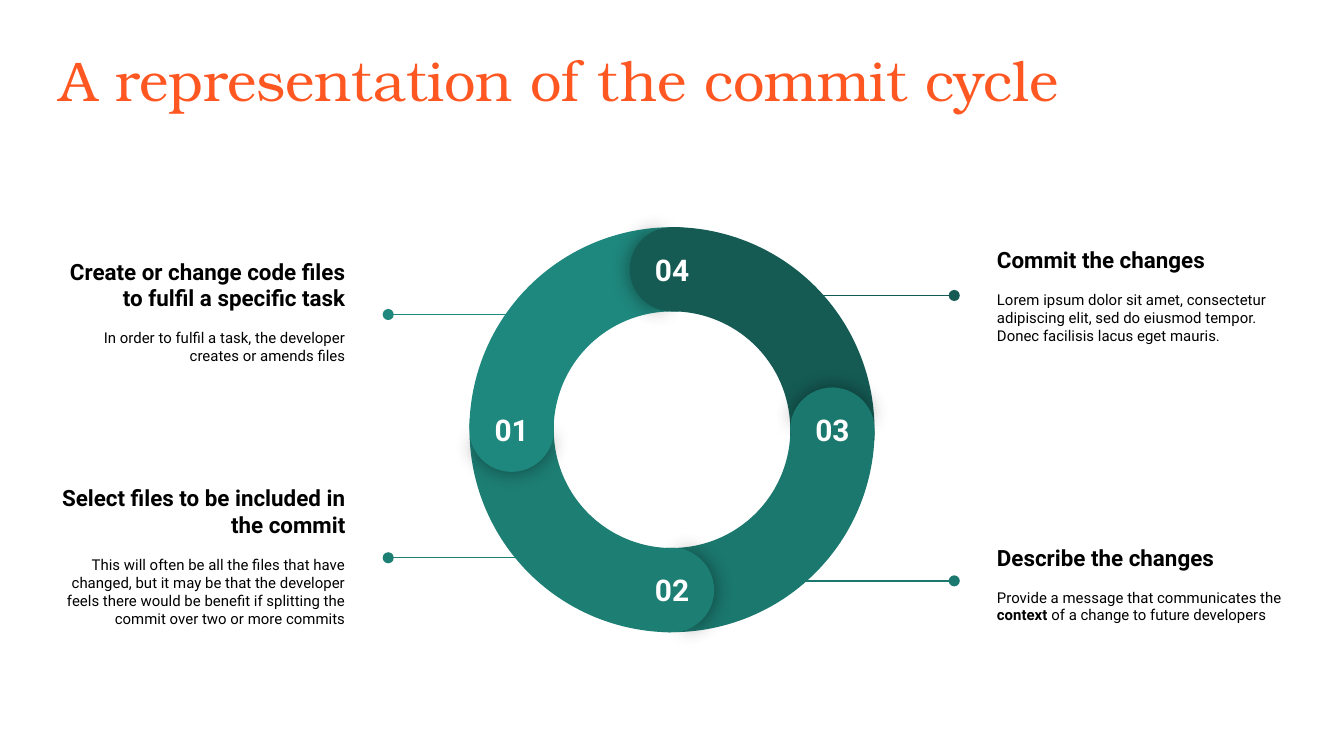
from math import cos, radians, sin

from lxml.etree import SubElement
from pptx import Presentation
from pptx.dml.color import RGBColor
from pptx.enum.shapes import MSO_CONNECTOR, MSO_SHAPE
from pptx.enum.text import MSO_ANCHOR, MSO_AUTO_SIZE, PP_ALIGN
from pptx.oxml.ns import qn
from pptx.util import Pt

ORANGE = RGBColor(0xFF, 0x57, 0x22)
WHITE = RGBColor(0xFF, 0xFF, 0xFF)
BLACK = RGBColor(0, 0, 0)
LIGHT_TEAL = RGBColor(0x1F, 0x88, 0x7E)
TEAL = RGBColor(0x1D, 0x7E, 0x74)
DEEP_TEAL = RGBColor(0x1B, 0x78, 0x6E)
DARK_TEAL = RGBColor(0x15, 0x5B, 0x54)
TITLE_FONT, BODY_FONT = "TeX Gyre Bonum", "Roboto"

TITLE = "A representation of the commit cycle"
STEPS = [
    dict(number="01", angle=180, color=LIGHT_TEAL, left_side=True,
         text_top=116, line_y=168.5, line_start=290,
         heading="Create or change code files to fulfil a specific task",
         body=[("In order to fulfil a task, the developer creates or amends files", False)]),
    dict(number="02", angle=90, color=TEAL, left_side=True,
         text_top=247, line_y=298.8, line_start=311,
         heading="Select files to be included in the commit",
         body=[("This will often be all the files that have changed, but it may be that "
                "the developer feels there would be benefit if splitting the commit over "
                "two or more commits", False)]),
    dict(number="03", angle=0, color=DEEP_TEAL, left_side=False,
         text_top=262, line_y=311.2, line_start=410.5,
         heading="Describe the changes",
         body=[("Provide a message that communicates the ", False), ("context", True),
               (" of a change to future developers", False)]),
    dict(number="04", angle=270, color=DARK_TEAL, left_side=False,
         text_top=107.5, line_y=158.3, line_start=410.5,
         heading="Commit the changes",
         body=[("Lorem ipsum dolor sit amet, consectetur adipiscing elit, sed do eiusmod "
                "tempor. Donec facilisis lacus eget mauris.", False)]),
]

CENTER_X, CENTER_Y = 360, 230.2
RING_SIZE, CAP_SIZE = 217, 45.2
CAP_RADIUS = (RING_SIZE - CAP_SIZE) / 2
ARC_ADJUSTMENTS = (126.2, 181.8, 0.208)
SHADED_CAP = (61.9, 149.96)
PLAIN_CAP = (40.28, 171.84)
LABEL_WIDTH, LABEL_HEIGHT, LABEL_LIFT = 39.6, 21, 6.3
TEXT_WIDTH, TEXT_HEIGHT, INSET = 167, 101.5, 7.2


def add_sector(slide, kind, x, y, size, rotation, adjustments, color):
    shape = slide.shapes.add_shape(
        kind, Pt(x - size / 2), Pt(y - size / 2), Pt(size), Pt(size))
    shape.rotation = rotation % 360
    for index, value in enumerate(adjustments):
        shape.adjustments[index] = value
    shape.fill.solid()
    shape.fill.fore_color.rgb = color
    shape.line.fill.background()
    shape.shadow.inherit = False
    return shape


def add_glow(shape):
    effects = shape._element.spPr.find(qn("a:effectLst"))
    shadow = SubElement(effects, qn("a:outerShdw"), blurRad=str(Pt(11.2)),
                        dist="0", dir="0", algn="ctr", rotWithShape="0")
    color = SubElement(shadow, qn("a:srgbClr"), val="000000")
    SubElement(color, qn("a:alpha"), val="43000")


def set_frame(frame, anchor):
    frame.word_wrap = True
    frame.auto_size = MSO_AUTO_SIZE.NONE
    frame.vertical_anchor = anchor
    frame.margin_left = frame.margin_right = Pt(INSET)
    frame.margin_top = frame.margin_bottom = Pt(INSET)


def add_text_box(slide, left, top, width, height, anchor):
    box = slide.shapes.add_textbox(Pt(left), Pt(top), Pt(width), Pt(height))
    set_frame(box.text_frame, anchor)
    return box.text_frame


def add_run(paragraph, text, size, color, bold=False, font=BODY_FONT):
    run = paragraph.add_run()
    run.text = text
    run.font.name = font
    run.font.size = Pt(size)
    run.font.bold = bold
    run.font.color.rgb = color


def add_title(slide):
    title = slide.shapes.title
    title.left, title.top, title.width, title.height = Pt(24.5), Pt(17.3), Pt(671), Pt(45.4)
    set_frame(title.text_frame, MSO_ANCHOR.TOP)
    paragraph = title.text_frame.paragraphs[0]
    paragraph.alignment = PP_ALIGN.LEFT
    add_run(paragraph, TITLE, 30, ORANGE, font=TITLE_FONT)


def add_cap(slide, step):
    x = CENTER_X + CAP_RADIUS * cos(radians(step["angle"]))
    y = CENTER_Y + CAP_RADIUS * sin(radians(step["angle"]))
    shaded = add_sector(slide, MSO_SHAPE.PIE, x, y, CAP_SIZE,
                        step["angle"] + 90.7, SHADED_CAP, step["color"])
    add_glow(shaded)
    add_sector(slide, MSO_SHAPE.PIE, x, y, CAP_SIZE,
               step["angle"] + 270, PLAIN_CAP, step["color"])
    frame = add_text_box(slide, x - LABEL_WIDTH / 2, y - LABEL_LIFT - LABEL_HEIGHT / 2,
                         LABEL_WIDTH, LABEL_HEIGHT, MSO_ANCHOR.TOP)
    paragraph = frame.paragraphs[0]
    paragraph.alignment = PP_ALIGN.CENTER
    add_run(paragraph, step["number"], 16, WHITE, bold=True)


def add_description(slide, step):
    left, line_end, alignment = (
        (25.2, 208, PP_ALIGN.RIGHT) if step["left_side"] else (527, 511.2, PP_ALIGN.LEFT))
    frame = add_text_box(slide, left, step["text_top"], TEXT_WIDTH, TEXT_HEIGHT,
                         MSO_ANCHOR.MIDDLE)
    heading = frame.paragraphs[0]
    heading.alignment = alignment
    add_run(heading, step["heading"], 12, BLACK, bold=True)
    body = frame.add_paragraph()
    body.alignment = alignment
    body.space_before, body.space_after = Pt(9.4), Pt(16)
    for text, bold in step["body"]:
        add_run(body, text, 8, BLACK, bold)

    connector = slide.shapes.add_connector(
        MSO_CONNECTOR.STRAIGHT, Pt(step["line_start"]), Pt(step["line_y"]),
        Pt(line_end), Pt(step["line_y"]))
    connector.line.color.rgb = step["color"]
    connector.line.width = Pt(0.75)
    SubElement(connector.line._get_or_add_ln(), qn("a:tailEnd"), type="oval")
    SubElement(connector._element.spPr, qn("a:effectLst"))


def main():
    presentation = Presentation()
    presentation.slide_width, presentation.slide_height = Pt(720), Pt(405)
    slide = presentation.slides.add_slide(presentation.slide_layouts[5])
    add_title(slide)
    for step in STEPS:
        add_sector(slide, MSO_SHAPE.BLOCK_ARC, CENTER_X, CENTER_Y, RING_SIZE,
                   step["angle"] + 150, ARC_ADJUSTMENTS, step["color"])
    for step in STEPS:
        add_cap(slide, step)
    for step in STEPS:
        add_description(slide, step)
    presentation.save("out.pptx")


if __name__ == "__main__":
    main()
